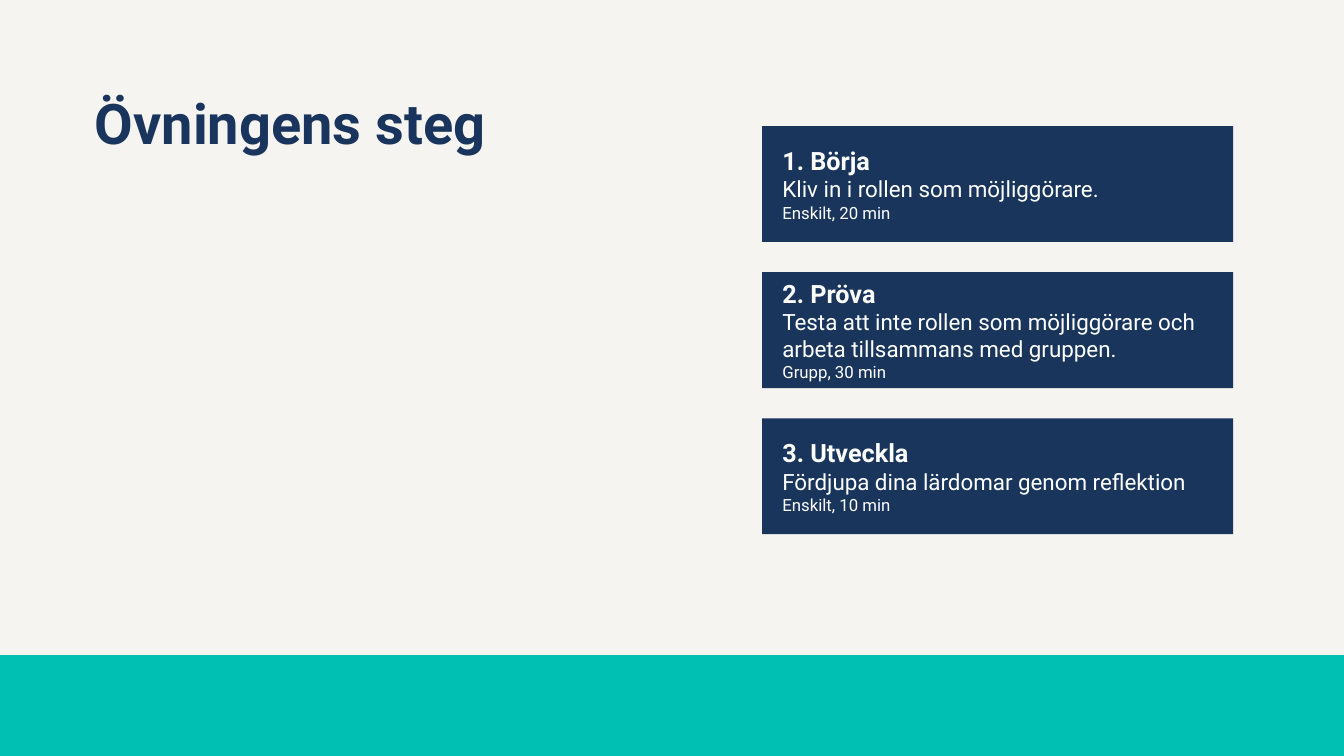
import dataclasses

import pptx
import pptx.dml.color
import pptx.enum.shapes
import pptx.enum.text
import pptx.util

EMU_PER_PX = 9144  # 100 px to the inch
SLIDE_WIDTH, SLIDE_HEIGHT = 1333, 750
TITLE_ONLY = 5

STEP_LEFT, STEP_TOP = 756, 125
STEP_WIDTH, STEP_HEIGHT = 467, 115
STEP_PITCH = 145

STEPS = [
    ("1. Börja", "Kliv in i rollen som möjliggörare.", "Enskilt, 20 min"),
    ("2. Pröva",
     "Testa att inte rollen som möjliggörare och arbeta tillsammans med gruppen.",
     "Grupp, 30 min"),
    ("3. Utveckla", "Fördjupa dina lärdomar genom reflektion", "Enskilt, 10 min"),
]


@dataclasses.dataclass(frozen=True)
class Theme:
    font: str = "Roboto"
    background: str = "F5F4F0"
    band: str = "00BFB3"
    title: str = "1A355D"
    step: str = "1A355C"
    step_text: str = "FEFFFF"
    title_size: int = 40
    heading_size: int = 18
    body_size: int = 16
    detail_size: int = 12


THEME = Theme()


def px(length):
    return pptx.util.Emu(length * EMU_PER_PX)


def rgb(code):
    return pptx.dml.color.RGBColor.from_string(code)


def format_span(span, size, color, bold=False):
    span.font.name = THEME.font
    span.font.size = pptx.util.Pt(size)
    span.font.bold = bold
    span.font.color.rgb = rgb(color)


def set_margins(frame, left, top, right, bottom):
    frame.margin_left, frame.margin_top = px(left), px(top)
    frame.margin_right, frame.margin_bottom = px(right), px(bottom)


def add_box(page, left, top, width, height, color):
    box = page.shapes.add_shape(
        pptx.enum.shapes.MSO_SHAPE.RECTANGLE,
        px(left), px(top), px(width), px(height))
    box.shadow.inherit = False
    box.fill.solid()
    box.fill.fore_color.rgb = rgb(color)
    box.line.fill.background()
    return box


def set_title(page, text):
    title = page.shapes.title
    title.left, title.top = px(94), px(94)
    title.width, title.height = px(1150), px(61)
    frame = title.text_frame
    frame.text = text
    frame.word_wrap = True
    frame.auto_size = pptx.enum.text.MSO_AUTO_SIZE.SHAPE_TO_FIT_TEXT
    frame.vertical_anchor = pptx.enum.text.MSO_ANCHOR.BOTTOM
    set_margins(frame, 0, 0, 0, 0)
    para = frame.paragraphs[0]
    para.alignment = pptx.enum.text.PP_ALIGN.LEFT
    para.line_spacing = 0.9
    format_span(para.runs[0], THEME.title_size, THEME.title, bold=True)


def add_step(page, top, heading, body, detail):
    box = add_box(page, STEP_LEFT, top, STEP_WIDTH, STEP_HEIGHT, THEME.step)
    frame = box.text_frame
    frame.word_wrap = True
    frame.vertical_anchor = pptx.enum.text.MSO_ANCHOR.MIDDLE
    set_margins(frame, 20, 5, 10, 5)
    frame.text = f"{heading}\v{body}\n{detail}"
    for para in frame.paragraphs:
        para.alignment = pptx.enum.text.PP_ALIGN.LEFT
    heading_span, body_span = frame.paragraphs[0].runs
    detail_span = frame.paragraphs[1].runs[0]
    format_span(heading_span, THEME.heading_size, THEME.step_text, bold=True)
    format_span(body_span, THEME.body_size, THEME.step_text)
    format_span(detail_span, THEME.detail_size, THEME.step_text)


def main():
    deck = pptx.Presentation()
    deck.slide_width, deck.slide_height = px(SLIDE_WIDTH), px(SLIDE_HEIGHT)
    page = deck.slides.add_slide(deck.slide_layouts[TITLE_ONLY])
    page.background.fill.solid()
    page.background.fill.fore_color.rgb = rgb(THEME.background)

    add_box(page, 0, 650, SLIDE_WIDTH, 100, THEME.band)
    set_title(page, "Övningens steg")
    for index, step in enumerate(STEPS):
        add_step(page, STEP_TOP + index * STEP_PITCH, *step)

    deck.save("out.pptx")


if __name__ == "__main__":
    main()
